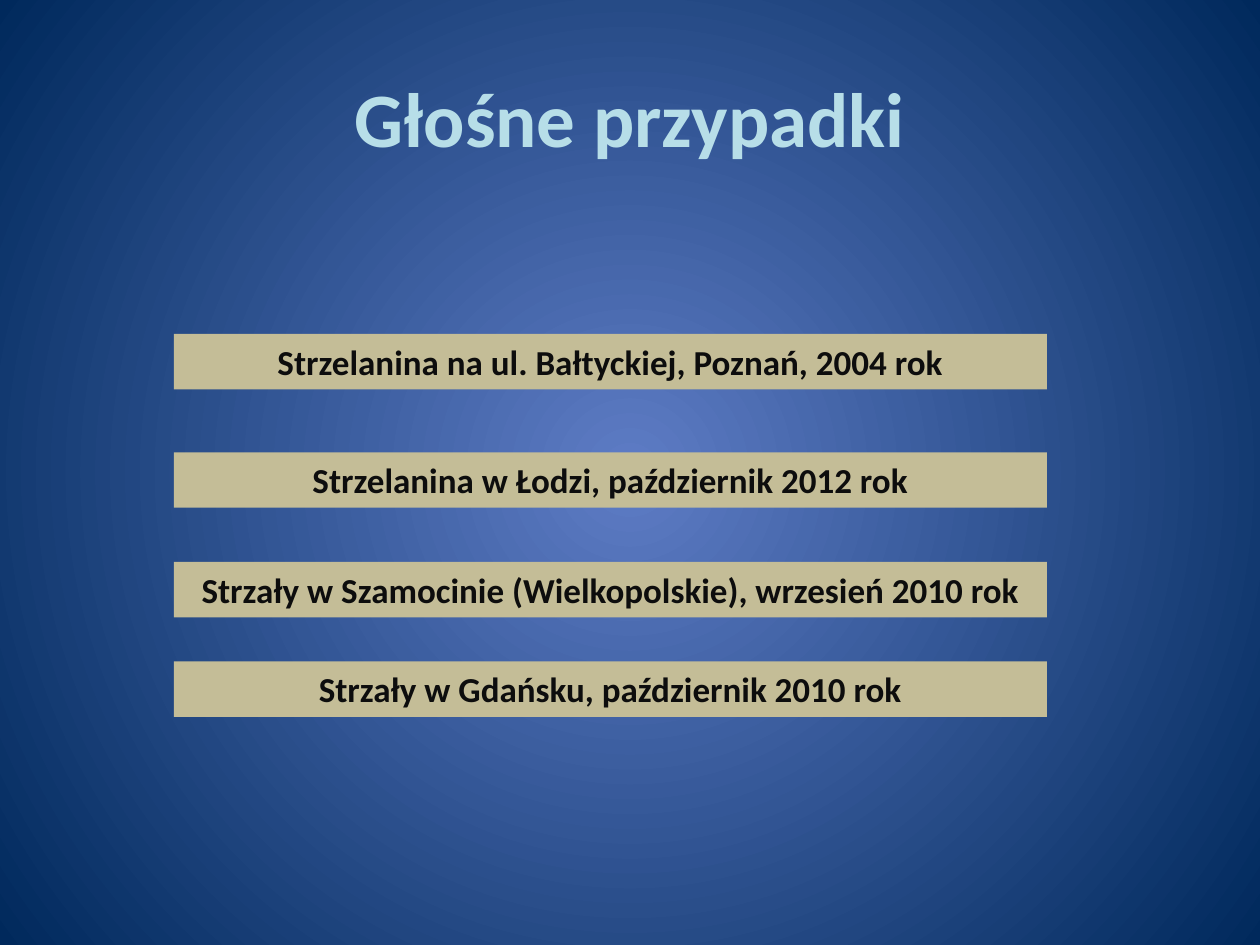
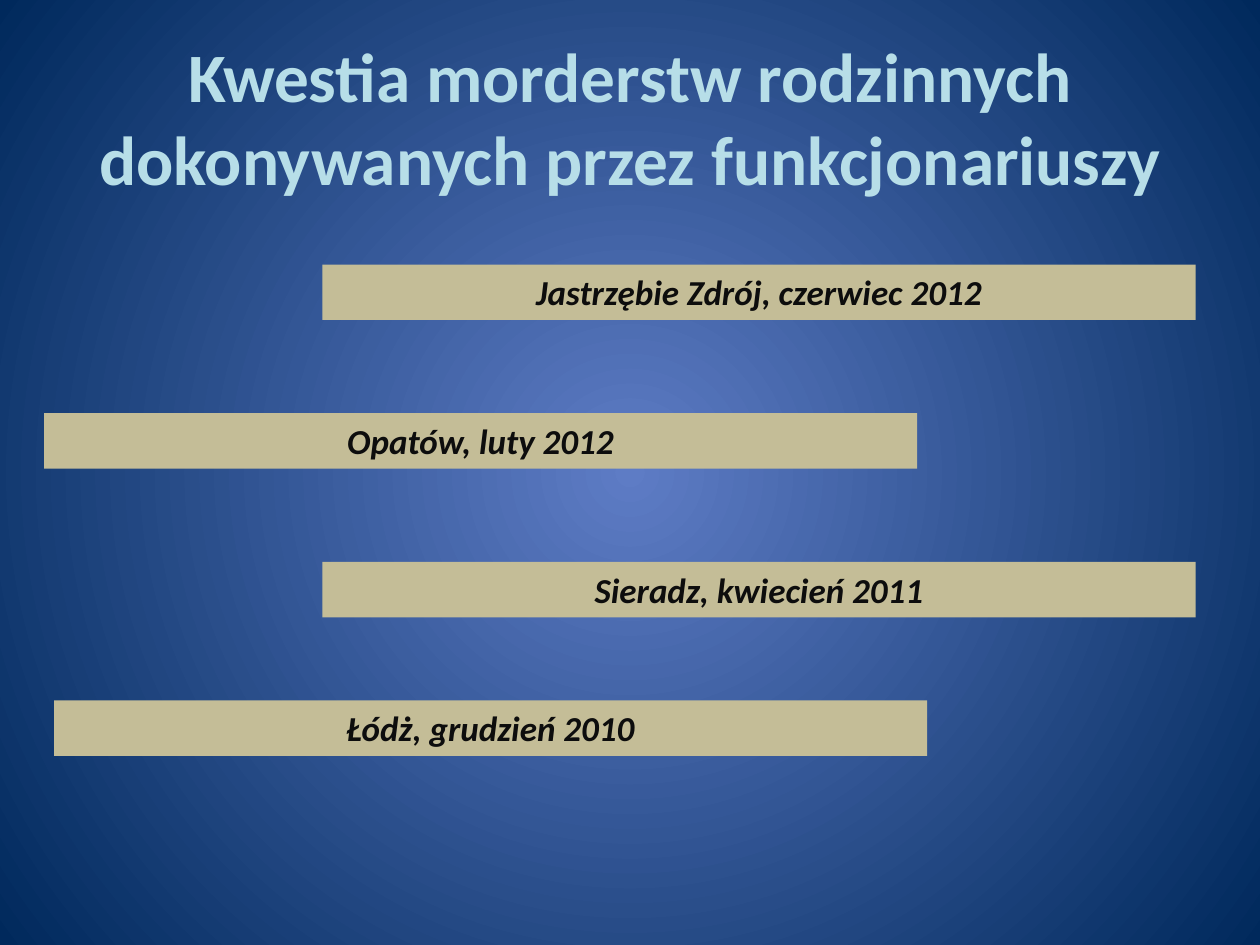
import pptx
import pptx.dml.color
import pptx.enum.shapes
import pptx.enum.text
import pptx.oxml
import pptx.oxml.ns
import pptx.util
from pptx.util import Inches

FONT = "Calibri"
COLORS = {
    "glow": "5E7CC5",
    "edge": "00295C",
    "title": "B7DEE8",
    "bar": "C4BD97",
    "ink": "0D0D0D",
}
BAR_WIDTH, BAR_HEIGHT = 6.93, 0.44

# Text, left and top of each bar
CASES = [
    ("Strzelanina na ul. Bałtyckiej, Poznań, 2004 rok", 1.38, 2.65),
    ("Strzelanina w Łodzi, październik 2012 rok", 1.38, 3.59),
    ("Strzały w Szamocinie (Wielkopolskie), wrzesień 2010 rok", 1.38, 4.46),
    ("Strzały w Gdańsku, październik 2010 rok", 1.38, 5.25),
]
MURDERS = [
    ("Jastrzębie Zdrój, czerwiec 2012", 2.56, 2.1),
    ("Opatów, luty 2012", 0.35, 3.28),
    ("Sieradz, kwiecień 2011", 2.56, 4.46),
    ("Łódż, grudzień 2010", 0.43, 5.56),
]


def rgb(name):
    return pptx.dml.color.RGBColor.from_string(COLORS[name])


def write(shape, text, size=20, color="ink", italic=False,
          anchor=pptx.enum.text.MSO_ANCHOR.TOP):
    """Fill a shape with one centred bold paragraph."""
    frame = shape.text_frame
    frame.word_wrap = True
    frame.vertical_anchor = anchor
    para = frame.paragraphs[0]
    para.alignment = pptx.enum.text.PP_ALIGN.CENTER
    run = para.add_run()
    run.text = text
    font = run.font
    font.name, font.size = FONT, pptx.util.Pt(size)
    font.bold, font.italic = True, italic
    font.color.rgb = rgb(color)


def add_glow(slide):
    """Radial background, light in the centre."""
    fill = slide.background.fill
    fill.gradient()
    for stop, name, place in zip(fill.gradient_stops, ("glow", "edge"), (0, 1)):
        stop.color.rgb = rgb(name)
        stop.position = place
    grad = slide.element.find(".//" + pptx.oxml.ns.qn("a:gradFill"))
    grad.remove(grad.find(pptx.oxml.ns.qn("a:lin")))
    grad.append(pptx.oxml.parse_xml(
        f'<a:path {pptx.oxml.ns.nsdecls("a")} path="circle">'
        '<a:fillToRect l="50000" t="50000" r="50000" b="50000"/></a:path>'))


def add_title(slide, text, size):
    box = slide.shapes.add_textbox(
        Inches(0.5), Inches(0.3), Inches(9), Inches(1.25))
    write(box, text, size=size, color="title",
          anchor=pptx.enum.text.MSO_ANCHOR.MIDDLE)


def add_bar(slide, text, left, top, italic):
    bar = slide.shapes.add_shape(
        pptx.enum.shapes.MSO_SHAPE.RECTANGLE, Inches(left), Inches(top),
        Inches(BAR_WIDTH), Inches(BAR_HEIGHT))
    bar.shadow.inherit = False
    bar.fill.solid()
    bar.fill.fore_color.rgb = rgb("bar")
    bar.line.fill.background()
    write(bar, text, italic=italic)
    bar.text_frame.auto_size = pptx.enum.text.MSO_AUTO_SIZE.SHAPE_TO_FIT_TEXT


def add_page(deck, title, bars, size=44, italic=False):
    slide = deck.slides.add_slide(deck.slide_layouts[6])
    add_glow(slide)
    add_title(slide, title, size)
    for text, left, top in bars:
        add_bar(slide, text, left, top, italic)


def main():
    deck = pptx.Presentation()
    deck.slide_width, deck.slide_height = Inches(10), Inches(7.5)
    add_page(deck, "Głośne przypadki", CASES)
    add_page(deck, "Kwestia morderstw rodzinnych dokonywanych przez funkcjonariuszy",
             MURDERS, size=39.6, italic=True)
    deck.save("out.pptx")


if __name__ == "__main__":
    main()
